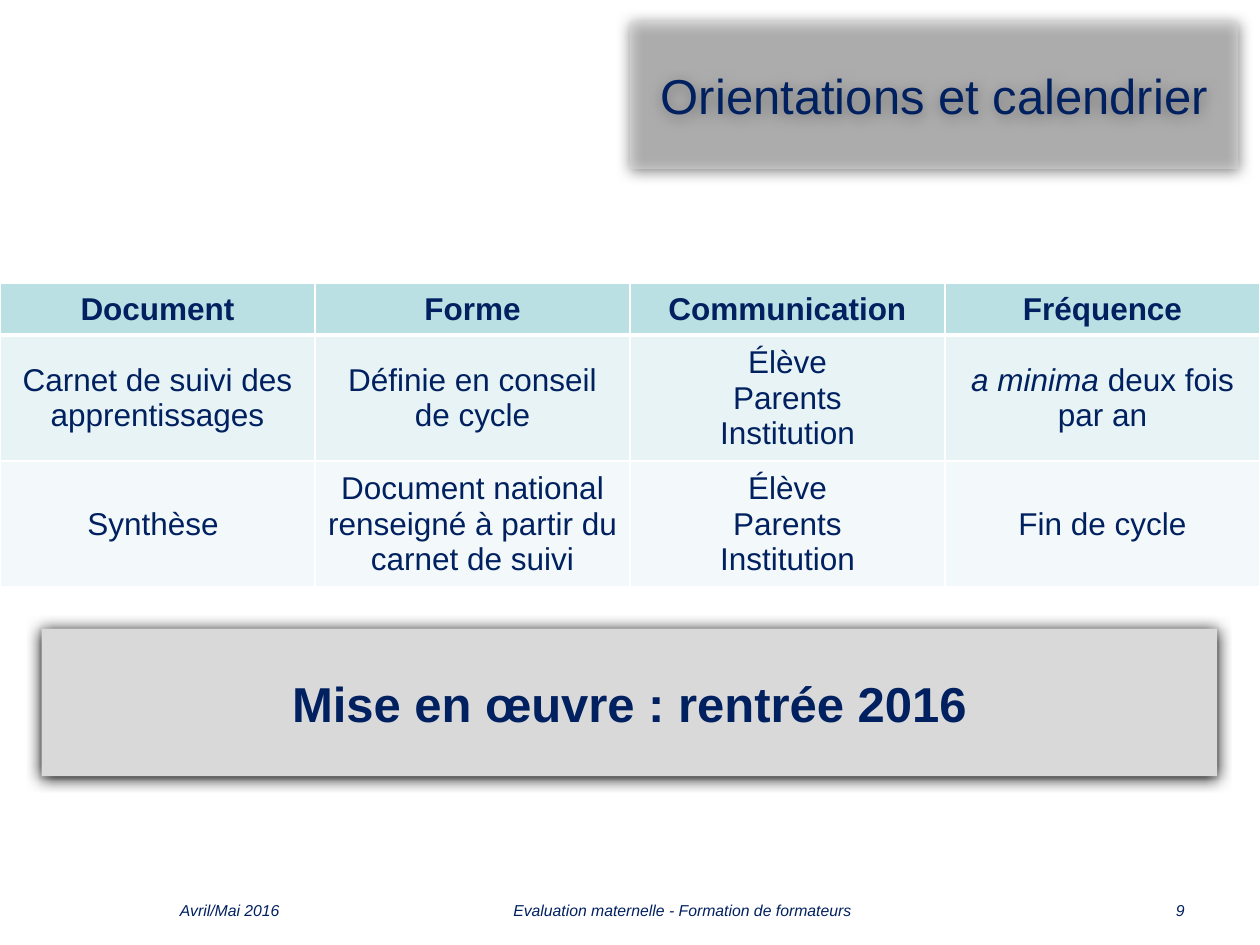
from dataclasses import dataclass

from lxml.etree import SubElement
from pptx import Presentation
from pptx.dml.color import RGBColor
from pptx.enum.shapes import MSO_SHAPE
from pptx.enum.text import MSO_ANCHOR, PP_ALIGN
from pptx.oxml.ns import qn
from pptx.util import Inches, Pt


@dataclass(frozen=True)
class Theme:
    font: str = "Arial"
    ink: str = "002060"
    panel: str = "D9D9D9"
    border: str = "FFFFFF"
    shadow: str = "000000"
    rows: tuple = ("BBE0E3", "E7F3F4", "F3F9FA")
    banner_size: int = 28
    table_size: int = 18
    footer_size: int = 9


THEME = Theme()

# Each cell is a list of paragraphs; a paragraph is a list of (text, format) runs
AUDIENCE = ["Élève", "Parents", "Institution"]
TABLE = [
    [["Document"], ["Forme"], ["Communication"], ["Fréquence"]],
    [["Carnet de suivi des apprentissages"], ["Définie en conseil de cycle"], AUDIENCE,
     [[("a minima ", {"italic": True}), ("deux fois par an", {})]]],
    [["Synthèse "], ["Document national", "renseigné à partir du carnet de suivi"],
     AUDIENCE, ["Fin de cycle"]],
]
ROW_HEIGHTS = (0.41, 1, 1)
COL_WIDTH = 2.5

FOOTERS = [
    ("Avril/Mai 2016", 1.33, 2.33, PP_ALIGN.LEFT),
    ("Evaluation maternelle - Formation de formateurs", 3.83, 3.17, PP_ALIGN.CENTER),
    ("9", 7.17, 2.33, PP_ALIGN.RIGHT),
]


def write(tf, paragraphs, size, align=PP_ALIGN.CENTER, **formats):
    """Fill a text frame with paragraphs in the theme font."""
    tf.word_wrap = True
    for i, content in enumerate(paragraphs):
        p = tf.add_paragraph() if i else tf.paragraphs[0]
        p.alignment = align
        runs = [(content, {})] if isinstance(content, str) else content
        for text, extra in runs:
            r = p.add_run()
            r.text = text
            values = {"name": THEME.font, "size": Pt(size), **formats, **extra}
            for name, value in values.items():
                setattr(r.font, name, value)
            r.font.color.rgb = RGBColor.from_string(THEME.ink)


def add_shadow(s):
    """Soft shadow just below the shape."""
    s.shadow.inherit = False
    effects = s._element.spPr.find(qn("a:effectLst"))
    shadow = SubElement(effects, qn("a:outerShdw"), blurRad=str(Pt(8.5)),
                        dist=str(Pt(1)), dir=str(90 * 60000), algn="ctr", rotWithShape="0")
    SubElement(shadow, qn("a:srgbClr"), val=THEME.shadow)


def add_banner(slide, text, left, top, width, height, opacity=100, **formats):
    s = slide.shapes.add_shape(MSO_SHAPE.RECTANGLE, Inches(left), Inches(top),
                               Inches(width), Inches(height))
    s.fill.solid()
    s.fill.fore_color.rgb = RGBColor.from_string(THEME.panel)
    if opacity < 100:
        color = s._element.spPr.find(qn("a:solidFill"))[0]
        SubElement(color, qn("a:alpha"), val=str(opacity * 1000))
    s.line.fill.background()
    add_shadow(s)
    s.text_frame.vertical_anchor = MSO_ANCHOR.MIDDLE
    write(s.text_frame, [text], THEME.banner_size, **formats)


def add_footer(slide, text, left, width, align):
    s = slide.shapes.add_textbox(Inches(left), Inches(6.99), Inches(width), Inches(0.36))
    s.text_frame.vertical_anchor = MSO_ANCHOR.BOTTOM
    write(s.text_frame, [text], THEME.footer_size, align, italic=True)


def set_borders(cell, **widths):
    tc_pr = cell._tc.get_or_add_tcPr()
    for side in "LRTB":
        line = SubElement(tc_pr, qn(f"a:ln{side}"), w=str(Pt(widths.get(side, 1))))
        fill = SubElement(line, qn("a:solidFill"))
        SubElement(fill, qn("a:srgbClr"), val=THEME.border)


def add_calendar(slide):
    cols = len(TABLE[0])
    table = slide.shapes.add_table(len(TABLE), cols, Inches(0), Inches(2.25),
                                   Inches(cols * COL_WIDTH), Inches(sum(ROW_HEIGHTS))).table
    for col in table.columns:
        col.width = Inches(COL_WIDTH)
    for i, (row, height, color) in enumerate(zip(TABLE, ROW_HEIGHTS, THEME.rows)):
        table.rows[i].height = Inches(height)
        # A thick rule separates the header from the body
        rule = {0: {"B": 3}, 1: {"T": 3}}.get(i, {})
        for j, paragraphs in enumerate(row):
            cell = table.cell(i, j)
            set_borders(cell, **rule)
            cell.fill.solid()
            cell.fill.fore_color.rgb = RGBColor.from_string(color)
            cell.vertical_anchor = MSO_ANCHOR.MIDDLE
            write(cell.text_frame, paragraphs, THEME.table_size, bold=i == 0)


def main():
    prs = Presentation()
    prs.slide_width, prs.slide_height = Inches(10), Inches(7.5)
    slide = prs.slides.add_slide(prs.slide_layouts[6])

    # Table of documents
    add_calendar(slide)

    # Footer line
    for footer in FOOTERS:
        add_footer(slide, *footer)

    # Title and closing message
    add_banner(slide, "Orientations et calendrier", 5, 0.17, 4.83, 1.17, opacity=50)
    add_banner(slide, "Mise en œuvre : rentrée 2016", 0.33, 4.99, 9.33, 1.17, bold=True)

    prs.save("out.pptx")


if __name__ == "__main__":
    main()
